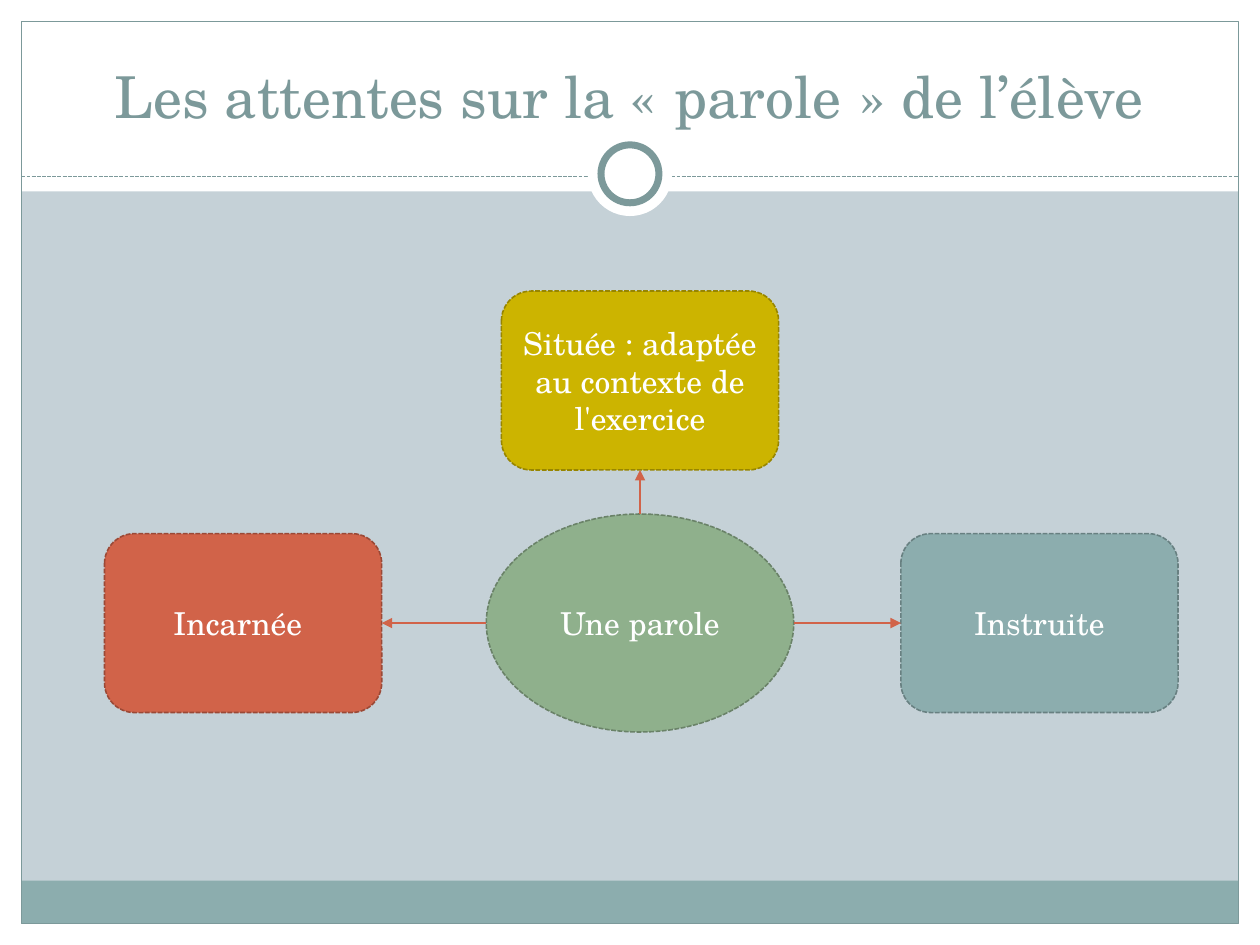
from lxml import etree
from pptx import Presentation
from pptx.dml.color import RGBColor
from pptx.enum import dml, shapes, text
from pptx.oxml import ns
from pptx.util import Inches, Pt

FONT = "TeX Gyre Schola"
TEAL, SAGE, RED, WHITE = "7C999A", "8CADAE", "D16349", "FFFFFF"
KIND = shapes.MSO_SHAPE
WIDE, HIGH, EDGE = 10, 7.5, 0.17


def paint(color, value):
    color.rgb = RGBColor.from_string(value)


def stroke(line, color, width, dash=False):
    paint(line.color, color)
    line.width = Pt(width)
    if dash:
        line.dash_style = dml.MSO_LINE.SQUARE_DOT


def write(frame, words, size, color):
    frame.text = words
    frame.word_wrap = True
    para = frame.paragraphs[0]
    para.alignment = text.PP_ALIGN.CENTER
    font = para.runs[0].font
    font.name, font.size = FONT, Pt(size)
    paint(font.color, color)


def add_form(slide, kind, box, fill=None):
    """Add a preset shape without line or shadow."""
    form = slide.shapes.add_shape(kind, *map(Inches, box))
    form.shadow.inherit = False
    form.line.fill.background()
    if fill:
        form.fill.solid()
        paint(form.fill.fore_color, fill)
    else:
        form.fill.background()
    return form


def add_line(slide, start, end, color, dash=False, arrow=False):
    link = slide.shapes.add_connector(
        shapes.MSO_CONNECTOR.STRAIGHT, *map(Inches, (*start, *end)))
    stroke(link.line, color, 0.75, dash)
    if arrow:
        etree.SubElement(link.line._get_or_add_ln(), ns.qn("a:tailEnd"), type="triangle")
    etree.SubElement(link.element.spPr, ns.qn("a:effectLst"))


def add_frame(slide, left, top, width, height):
    """Draw white margins, header, footer band and border around the box."""
    right, low = left + width, top + height
    for box in ((0, low, WIDE, HIGH - low), (0, 0, WIDE, top + 1.35),
                (0, 0, left, HIGH), (right, 0, WIDE - right, HIGH)):
        add_form(slide, KIND.RECTANGLE, box, WHITE)
    add_form(slide, KIND.RECTANGLE, (left, low - 0.34, width, 0.34), SAGE)
    border = add_form(slide, KIND.RECTANGLE, (left, top, width, height))
    stroke(border.line, TEAL, 0.75)

    rule = top + 1.23
    add_line(slide, (left, rule), (right, rule), TEAL, dash=True)
    mid = left + width / 2
    for size in (0.67, 0.46):
        ring = add_form(slide, KIND.OVAL,
                        (mid - size / 2, rule - 0.02 - size / 2, size, size), WHITE)
    stroke(ring.line, TEAL, 4)


def set_title(slide, words, box):
    title = slide.shapes.title
    title.left, title.top, title.width, title.height = map(Inches, box)
    write(title.text_frame, words, 33, TEAL)
    title.text_frame.vertical_anchor = text.MSO_ANCHOR.BOTTOM
    # Bring the title in front of the white header.
    title.element.getparent().append(title.element)


def add_node(slide, kind, words, mid, size, fill, edge):
    """Add a labelled shape centred on mid."""
    (x, y), (width, height) = mid, size
    node = add_form(slide, kind, (x - width / 2, y - height / 2, width, height), fill)
    stroke(node.line, edge, 0.9, dash=True)
    frame = node.text_frame
    frame.margin_left = frame.margin_right = Inches(0.05)
    frame.vertical_anchor = text.MSO_ANCHOR.MIDDLE
    write(frame, words, 18, WHITE)


def add_map(slide, left, top, width, height):
    """Draw the central oval with one card on each side and one above."""
    card, hub = (2.2, 1.42), (2.44, 1.73)
    x, y = left + 4.25, top + height - hub[1] / 2
    cards = (
        ("Instruite", (left + width - card[0] / 2, y), (1, 0), SAGE, "688081"),
        ("Située : adaptée au contexte de l'exercice",
         (x, top + card[1] / 2), (0, -1), "CCB400", "978500"),
        ("Incarnée\u00a0", (left + card[0] / 2, y), (-1, 0), RED, "9B4936"),
    )
    for words, mid, way, fill, edge in cards:
        add_node(slide, KIND.ROUNDED_RECTANGLE, words, mid, card, fill, edge)
    add_node(slide, KIND.OVAL, "Une parole", (x, y), hub, "8FB08C", "6A8268")
    for words, mid, way, fill, edge in cards:
        start = (x + way[0] * hub[0] / 2, y + way[1] * hub[1] / 2)
        end = (mid[0] - way[0] * card[0] / 2, mid[1] - way[1] * card[1] / 2)
        add_line(slide, start, end, RED, arrow=True)


def main():
    deck = Presentation()
    deck.slide_width, deck.slide_height = Inches(WIDE), Inches(HIGH)
    slide = deck.slides.add_slide(deck.slide_layouts[5])
    back = slide.background.fill
    back.solid()
    paint(back.fore_color, "C5D1D7")
    add_frame(slide, EDGE, EDGE, WIDE - 2 * EDGE, HIGH - 2 * EDGE)
    set_title(slide, "Les attentes sur la «\u00a0parole\u00a0» de l’élève",
              (0.33, 0.25, 9.33, 0.83))
    add_map(slide, 0.83, 2.31, 8.52, 3.5)
    deck.save("out.pptx")


if __name__ == "__main__":
    main()
